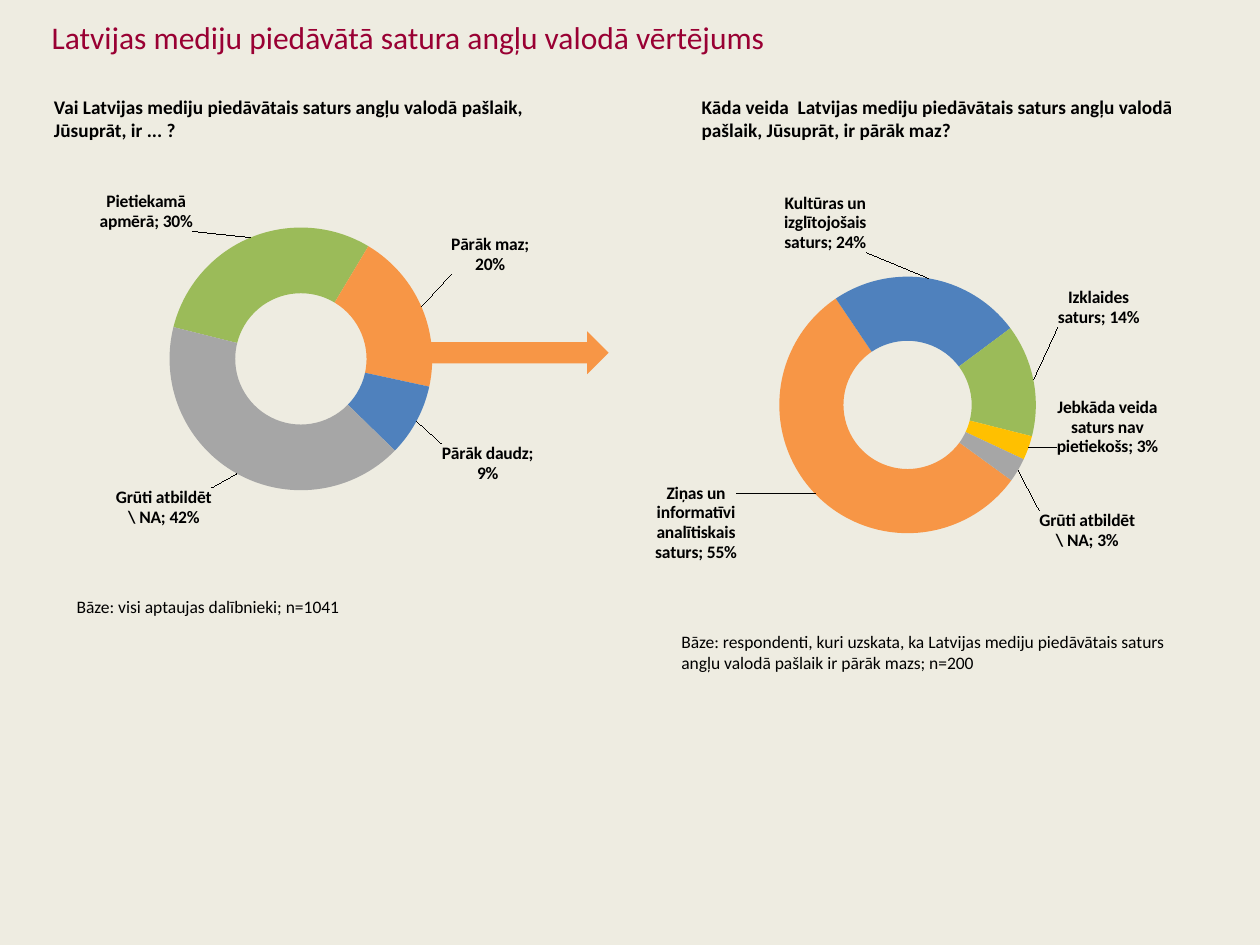
"""Build a slide with two linked doughnut charts on English-language media content in Latvia."""
from copy import deepcopy
from dataclasses import dataclass
from math import cos, radians, sin

from pptx import Presentation
from pptx.chart.data import CategoryChartData
from pptx.dml.color import RGBColor
from pptx.enum.chart import XL_CHART_TYPE
from pptx.enum.shapes import MSO_SHAPE
from pptx.enum.text import MSO_ANCHOR, PP_ALIGN
from pptx.oxml import parse_xml
from pptx.oxml.ns import qn
from pptx.util import Inches, Pt


@dataclass(frozen=True)
class Theme:
    font: str = "Calibri"
    background: str = "EEECE1"
    title: str = "990033"
    text: str = "000000"
    orange: str = "F79646"
    blue: str = "4F81BD"
    green: str = "9BBB59"
    grey: str = "A6A6A6"
    yellow: str = "FFC000"
    title_size: int = 18
    question_size: int = 11
    small_size: int = 10


THEME = Theme()
CHART_NS = 'xmlns:c="http://schemas.openxmlformats.org/drawingml/2006/chart"'
RING_MIDDLE = 0.75

TITLE = "Latvijas mediju piedāvātā satura angļu valodā vērtējums"
TITLE_BOX = (0.31, 0.07, 9.37, 0.44)
ARROW_BOX = (3.02, 2.63, 1.81, 0.34)

# Each slice: category, share, colour, centre of its label on the slide.
PANELS = [
    {
        "question": "Vai Latvijas mediju piedāvātais saturs angļu valodā pašlaik, Jūsuprāt, ir ... ?",
        "question_box": (0.33, 0.71, 4.25, 0.44),
        "base": "Bāze: visi aptaujas dalībnieki; n=1041",
        "base_box": (0.51, 4.68, 2.91, 0.27),
        "chart_box": (0.28, 1.23, 4.02, 3.15),
        "plot": (0.265, 0.183, 0.519, 0.662),
        "start": 284,
        "slices": [
            ("Pietiekamā apmērā", 0.30, THEME.green, (1.16, 1.68)),
            ("Pārāk maz", 0.20, THEME.orange, (3.89, 2.02)),
            ("Pārāk daudz", 0.09, THEME.blue, (3.87, 3.68)),
            ("Grūti atbildēt \\ NA", 0.42, THEME.grey, (1.30, 4.03)),
        ],
    },
    {
        "question": "Kāda veida  Latvijas mediju piedāvātais saturs angļu valodā pašlaik, Jūsuprāt, ir pārāk maz?",
        "question_box": (5.47, 0.71, 4.25, 0.44),
        "base": "Bāze: respondenti, kuri uzskata, ka Latvijas mediju piedāvātais saturs "
                "angļu valodā pašlaik ir pārāk mazs; n=200",
        "base_box": (5.31, 4.96, 4.1, 0.44),
        "chart_box": (5.2, 1.4, 4.02, 3.29),
        "plot": (0.245, 0.242, 0.507, 0.619),
        "start": 126,
        "slices": [
            ("Ziņas un informatīvi analītiskais saturs", 0.55, THEME.orange, (5.52, 4.15)),
            ("Kultūras un izglītojošais saturs", 0.24, THEME.blue, (6.55, 1.77)),
            ("Izklaides saturs", 0.14, THEME.green, (8.72, 2.44)),
            ("Jebkāda veida saturs nav pietiekošs", 0.03, THEME.yellow, (8.79, 3.39)),
            ("Grūti atbildēt \\ NA", 0.03, THEME.grey, (8.63, 4.21)),
        ],
    },
]


def inches(box):
    return [Inches(length) for length in box]


def style(font, size, color=THEME.text, bold=False):
    font.name, font.size, font.bold = THEME.font, Pt(size), bold
    font.color.rgb = RGBColor.from_string(color)


def paint(fill, color):
    fill.solid()
    fill.fore_color.rgb = RGBColor.from_string(color)


def add_text(slide, text, box, size, bold=False):
    frame = slide.shapes.add_textbox(*inches(box)).text_frame
    frame.word_wrap = True
    frame.text = text
    style(frame.paragraphs[0].runs[0].font, size, bold=bold)


def layout_xml(x, y, size=None):
    target = mode = extent = ""
    if size:
        target = '<c:layoutTarget val="inner"/>'
        mode = '<c:xMode val="edge"/><c:yMode val="edge"/>'
        extent = f'<c:w val="{size[0]}"/><c:h val="{size[1]}"/>'
    return parse_xml(
        f'<c:layout {CHART_NS}><c:manualLayout>{target}{mode}'
        f'<c:x val="{x:.4f}"/><c:y val="{y:.4f}"/>{extent}</c:manualLayout></c:layout>'
    )


def label_offsets(panel):
    left, top, width, height = panel["chart_box"]
    x, y, w, h = panel["plot"]
    center_x, center_y = left + (x + w / 2) * width, top + (y + h / 2) * height
    radius = RING_MIDDLE * min(w * width, h * height) / 2
    total = sum(share for _, share, _, _ in panel["slices"])
    angle = panel["start"]
    for _, share, _, (label_x, label_y) in panel["slices"]:
        sweep = 360 * share / total
        middle = radians(angle + sweep / 2)
        yield ((label_x - center_x - radius * sin(middle)) / width,
               (label_y - center_y + radius * cos(middle)) / height)
        angle += sweep


def place_labels(series, panel):
    labels = series.data_labels
    style(labels.font, THEME.small_size, bold=True)
    labels.number_format, labels.number_format_is_linked = "0%", False
    labels.show_value = labels.show_category_name = True
    group = series._element.find(qn("c:dLbls"))
    leader = group.find(qn("c:showLeaderLines"))
    if leader is not None:
        group.remove(leader)
    group.append(parse_xml(f'<c:separator {CHART_NS}>; </c:separator>'))
    shared = list(group)
    for index, offset in enumerate(label_offsets(panel)):
        label = parse_xml(f'<c:dLbl {CHART_NS}><c:idx val="{index}"/></c:dLbl>')
        label.append(layout_xml(*offset))
        label.extend(deepcopy(part) for part in shared)
        group.insert(index, label)
    group.append(parse_xml(f'<c:showLeaderLines {CHART_NS} val="1"/>'))


def add_doughnut(slide, panel):
    categories, shares, colors, _ = zip(*panel["slices"])
    data = CategoryChartData(number_format="0%")
    data.categories = categories
    data.add_series("Series 1", shares)
    chart = slide.shapes.add_chart(
        XL_CHART_TYPE.DOUGHNUT, *inches(panel["chart_box"]), data).chart
    chart.has_title = chart.has_legend = False
    style(chart.font, THEME.title_size)
    plot = chart.plots[0]
    plot.vary_by_categories = True
    series = plot.series[0]
    for index, color in enumerate(colors):
        point = series.points[index].format
        paint(point.fill, color)
        point.line.fill.background()
    place_labels(series, panel)
    doughnut = plot._element
    doughnut.find(qn("c:firstSliceAng")).set("val", str(panel["start"]))
    doughnut.find(qn("c:holeSize")).set("val", "40")
    area = doughnut.getparent()
    for automatic in area.findall(qn("c:layout")):
        area.remove(automatic)
    x, y, *size = panel["plot"]
    area.insert(0, layout_xml(x, y, size))


def main():
    deck = Presentation()
    deck.slide_width, deck.slide_height = Inches(10), Inches(7.5)
    slide = deck.slides.add_slide(deck.slide_layouts[5])
    paint(slide.background.fill, THEME.background)

    title = slide.shapes.title
    title.left, title.top, title.width, title.height = inches(TITLE_BOX)
    title.text_frame.text = TITLE
    title.text_frame.vertical_anchor = MSO_ANCHOR.MIDDLE
    heading = title.text_frame.paragraphs[0]
    heading.alignment = PP_ALIGN.LEFT
    style(heading.runs[0].font, THEME.title_size, THEME.title)

    for panel in PANELS:
        add_text(slide, panel["question"], panel["question_box"], THEME.question_size, bold=True)
        add_doughnut(slide, panel)
        add_text(slide, panel["base"], panel["base_box"], THEME.small_size)

    arrow = slide.shapes.add_shape(MSO_SHAPE.RIGHT_ARROW, *inches(ARROW_BOX))
    arrow.shadow.inherit = False
    paint(arrow.fill, THEME.orange)
    arrow.line.fill.background()

    deck.save("out.pptx")


if __name__ == "__main__":
    main()
